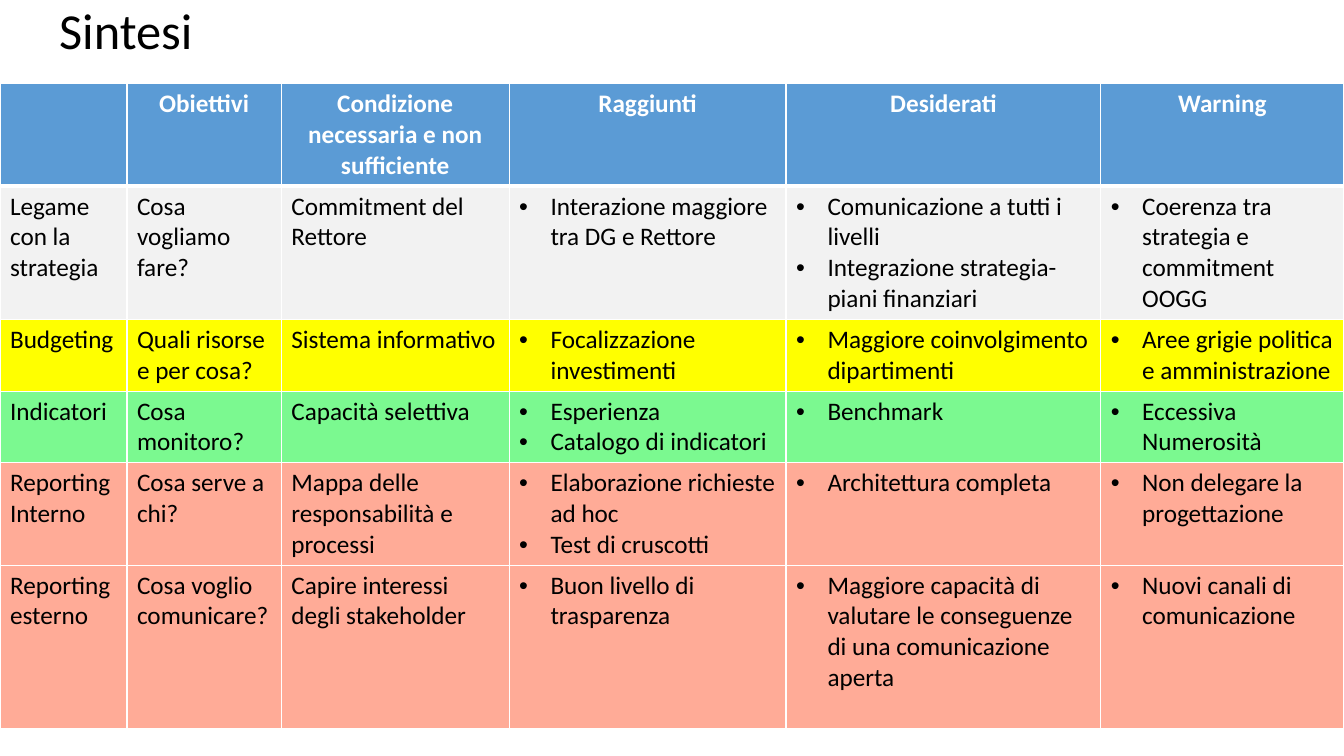
from lxml import etree
from pptx import Presentation
from pptx.dml.color import RGBColor
from pptx.enum.text import MSO_ANCHOR, PP_ALIGN
from pptx.oxml.ns import qn
from pptx.util import Cm, Pt

CENTER = PP_ALIGN.CENTER
LEFT = PP_ALIGN.LEFT
MIDDLE = MSO_ANCHOR.MIDDLE

TITLE = "Sintesi"
HEADS = ["", "Obiettivi", "Condizione necessaria e non sufficiente",
         "Raggiunti", "Desiderati", "Warning"]
ROWS = [
    ["Legame con la strategia", "Cosa vogliamo fare?", "Commitment del Rettore",
     "Interazione maggiore tra DG e Rettore",
     "Comunicazione a tutti i livelli\nIntegrazione strategia- piani finanziari",
     "Coerenza tra strategia e commitment OOGG"],
    ["Budgeting", "Quali risorse e per cosa?", "Sistema informativo",
     "Focalizzazione investimenti", "Maggiore coinvolgimento dipartimenti",
     "Aree grigie politica e amministrazione"],
    ["Indicatori", "Cosa monitoro?", "Capacità selettiva",
     "Esperienza\nCatalogo di indicatori", "Benchmark", "Eccessiva Numerosità"],
    ["Reporting\nInterno", "Cosa serve a chi?",
     "Mappa delle responsabilità e processi",
     "Elaborazione richieste ad hoc\nTest di cruscotti",
     "Architettura completa", "Non delegare la progettazione"],
    ["Reporting\nesterno", "Cosa voglio comunicare?",
     "Capire interessi degli stakeholder", "Buon livello di trasparenza",
     "Maggiore capacità di valutare le conseguenze di una comunicazione aperta",
     "Nuovi canali di comunicazione"],
]
COLORS = {"head": "5B9BD5", "grey": "F2F2F2", "yellow": "FFFF00",
          "green": "7BF990", "salmon": "FFAB97", "white": "FFFFFF",
          "black": "000000"}
FILLS = ["head", "grey", "yellow", "green", "salmon", "salmon"]
WIDTHS = [3.2, 3.89, 5.74, 6.98, 7.93, 6.13]
HEIGHTS = [2.58, 3.36, 1.8, 1.8, 2.58, 4.13]
FONT = "Calibri"
BULLET_COL = 3
INDENT = Cm(0.79)


def color(name):
    return RGBColor.from_string(COLORS[name])


def style(run, size, name, bold=False):
    run.font.name = FONT
    run.font.size = Pt(size)
    run.font.bold = bold
    run.font.color.rgb = color(name)


def border(cell, side, width):
    line = etree.SubElement(cell._tc.get_or_add_tcPr(), qn("a:ln" + side),
                            w=str(Pt(width)))
    fill = etree.SubElement(line, qn("a:solidFill"))
    etree.SubElement(fill, qn("a:srgbClr"), val=COLORS["white"])


def bullet(para):
    props = para._p.get_or_add_pPr()
    props.set("marL", str(INDENT))
    props.set("indent", str(-INDENT))
    etree.SubElement(props, qn("a:buFont"), typeface="Arial")
    etree.SubElement(props, qn("a:buChar"), char="•")


def fill_cell(cell, text, row, col):
    head = row == 0
    thick = {"T": row == 1, "B": head}
    for side in "LRTB":
        border(cell, side, 3 if thick.get(side) else 1)
    cell.fill.solid()
    cell.fill.fore_color.rgb = color(FILLS[row])
    cell.text_frame.text = text
    for para in cell.text_frame.paragraphs:
        para.alignment = CENTER if head else LEFT
        if not head and col >= BULLET_COL:
            bullet(para)
        for run in para.runs:
            style(run, 18, "white" if head else "black", head)


def add_title(slide):
    box = slide.shapes.add_textbox(Cm(1.24), Cm(0), Cm(29.21), Cm(1.68))
    frame = box.text_frame
    frame.word_wrap = True
    frame.vertical_anchor = MIDDLE
    frame.text = TITLE
    para = frame.paragraphs[0]
    para.line_spacing = 0.9
    style(para.runs[0], 36, "black")


def add_grid(slide):
    grid = [HEADS] + ROWS
    table = slide.shapes.add_table(
        len(grid), len(HEADS), Cm(0), Cm(2.11),
        Cm(sum(WIDTHS)), Cm(sum(HEIGHTS))).table
    for col, width in zip(table.columns, WIDTHS):
        col.width = Cm(width)
    for row, height in zip(table.rows, HEIGHTS):
        row.height = Cm(height)
    for r, texts in enumerate(grid):
        for c, text in enumerate(texts):
            fill_cell(table.cell(r, c), text, r, c)


def main():
    deck = Presentation()
    deck.slide_width = Cm(33.87)
    deck.slide_height = Cm(19.05)
    slide = deck.slides.add_slide(deck.slide_layouts[6])
    add_grid(slide)
    add_title(slide)
    deck.save("out.pptx")


if __name__ == "__main__":
    main()
